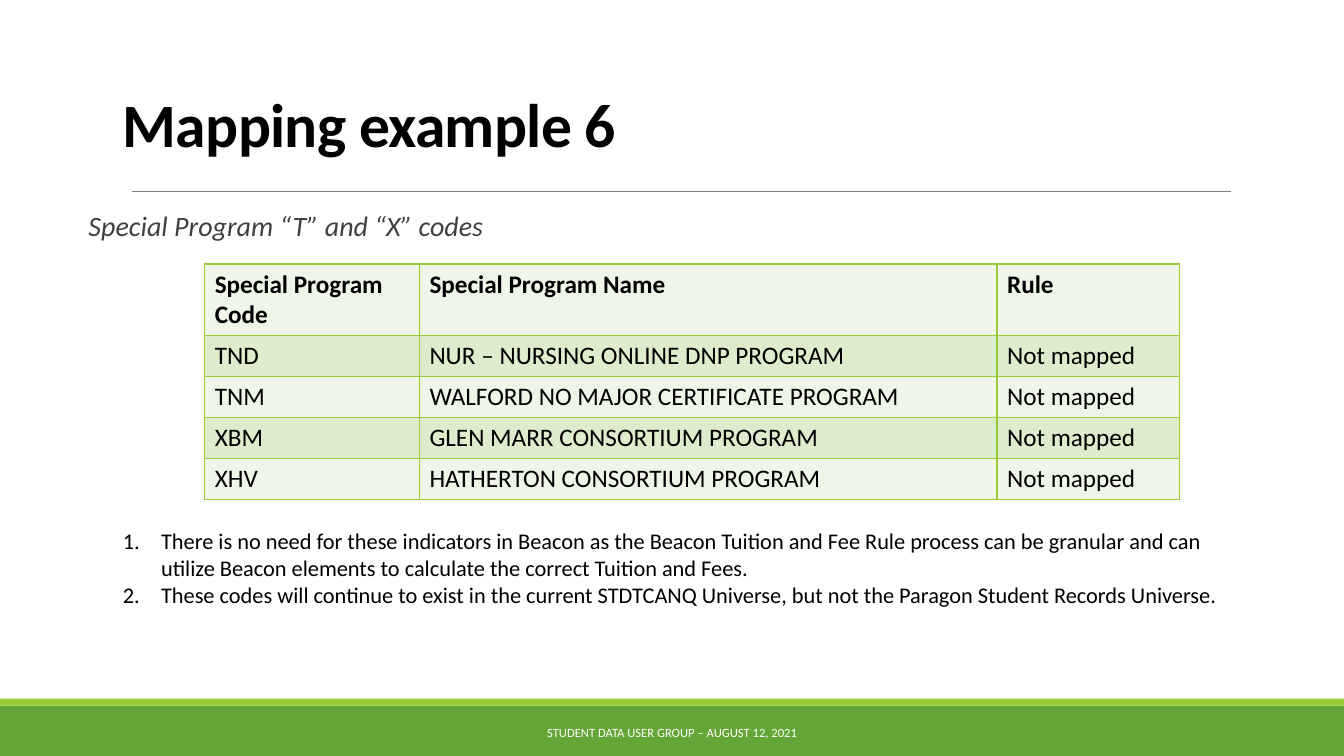
"""Builds the slide "Mapping example 6" with its special program table."""
from lxml.etree import SubElement
from pptx import Presentation
from pptx.dml.color import RGBColor
from pptx.enum.shapes import MSO_CONNECTOR, MSO_SHAPE
from pptx.enum.text import MSO_ANCHOR, PP_ALIGN
from pptx.oxml.ns import qn
from pptx.util import Inches, Pt

TITLE = "Mapping example 6"
SUBTITLE = "Special Program “T” and “X” codes"
FOOTER = "STUDENT DATA USER GROUP – AUGUST 12, 2021"
PROGRAMS = [
    ("Special Program Code", "Special Program Name", "Rule"),
    ("TND", "NUR – NURSING ONLINE DNP PROGRAM", "Not mapped"),
    ("TNM", "WALFORD NO MAJOR CERTIFICATE PROGRAM", "Not mapped"),
    ("XBM", "GLEN MARR CONSORTIUM PROGRAM", "Not mapped"),
    ("XHV", "HATHERTON CONSORTIUM PROGRAM", "Not mapped"),
]
NOTES = [
    "There is no need for these indicators in Beacon as the Beacon Tuition and Fee Rule process "
    "can be granular and can utilize Beacon elements to calculate the correct Tuition and Fees.",
    "These codes will continue to exist in the current STDTCANQ Universe, "
    "but not the Paragon Student Records Universe.",
]
COLORS = {"green": "63A537", "lime": "99CB38", "rule": "808080", "white": "FFFFFF",
          "black": "000000", "gray": "404040", "pale": "EFF6E8", "tint": "DEECCE"}
FONT = "Calibri"

WIDTH, HEIGHT = Inches(13.333), Inches(7.5)
TEXT_LEFT = 8.4
FOOTER_TOP, STRIPE_TOP = 93.33, 92.4
RULE_LEFT, RULE_RIGHT, RULE_TOP = 9.83, 91.58, 25.33
TABLE_LEFT, TABLE_TOP = 15.23, 34.93
PROGRAM_COLUMNS = (15.98, 42.98, 13.58)
HEADER_ROW, BODY_ROW = 9.5, 5.42
NOTE_INDENT = Inches(0.38)


def across(share):
    return round(WIDTH * share / 100)


def down(share):
    return round(HEIGHT * share / 100)


def color(name):
    return RGBColor.from_string(COLORS[name])


def write(frame, lines, size, ink="black", bold=False, italic=False, align=PP_ALIGN.LEFT,
          anchor=MSO_ANCHOR.TOP, spacing=None, tracking=None, numbered=False):
    frame.word_wrap = True
    frame.vertical_anchor = anchor
    for index, line in enumerate(lines):
        paragraph = frame.add_paragraph() if index else frame.paragraphs[0]
        paragraph.alignment = align
        if spacing:
            paragraph.line_spacing = spacing
        run = paragraph.add_run()
        run.text = line
        run.font.name, run.font.size = FONT, Pt(size)
        run.font.bold, run.font.italic = bold, italic
        run.font.color.rgb = color(ink)
        if tracking:
            run.font._element.set("spc", str(tracking))
        if numbered:
            properties = paragraph._p.get_or_add_pPr()
            properties.set("marL", str(NOTE_INDENT))
            properties.set("indent", str(-NOTE_INDENT))
            SubElement(properties, qn("a:buFont"), typeface="+mj-lt")
            SubElement(properties, qn("a:buAutoNum"), type="arabicPeriod")


def add_words(slide, left, top, width, height, lines, **style):
    words = slide.shapes.add_textbox(across(left), down(top), across(width), down(height))
    write(words.text_frame, lines, **style)


def add_band(slide, top, bottom, fill):
    band = slide.shapes.add_shape(MSO_SHAPE.RECTANGLE, 0, down(top), WIDTH, down(bottom - top))
    band.shadow.inherit = False
    band.fill.solid()
    band.fill.fore_color.rgb = color(fill)
    band.line.fill.background()


def add_rule(slide):
    rule = slide.shapes.add_connector(MSO_CONNECTOR.STRAIGHT, across(RULE_LEFT), down(RULE_TOP),
                                      across(RULE_RIGHT), down(RULE_TOP))
    rule.line.color.rgb = color("rule")
    rule.line.width = Pt(0.5)
    SubElement(rule._element.spPr, qn("a:effectLst"))


def add_borders(cell):
    properties = cell._tc.get_or_add_tcPr()
    for side in ("lnL", "lnR", "lnT", "lnB"):
        border = SubElement(properties, qn(f"a:{side}"), w=str(Pt(1)))
        SubElement(SubElement(border, qn("a:solidFill")), qn("a:srgbClr"), val=COLORS["lime"])


def add_programs(slide):
    heights = [HEADER_ROW] + [BODY_ROW] * (len(PROGRAMS) - 1)
    programs = slide.shapes.add_table(
        len(PROGRAMS), len(PROGRAM_COLUMNS), across(TABLE_LEFT), down(TABLE_TOP),
        across(sum(PROGRAM_COLUMNS)), down(sum(heights))).table
    programs.first_row = programs.horz_banding = False
    for column, share in zip(programs.columns, PROGRAM_COLUMNS):
        column.width = across(share)
    for r, (entries, share) in enumerate(zip(PROGRAMS, heights)):
        programs.rows[r].height = down(share)
        for c, entry in enumerate(entries):
            cell = programs.cell(r, c)
            add_borders(cell)
            cell.fill.solid()
            cell.fill.fore_color.rgb = color("tint" if r % 2 else "pale")
            write(cell.text_frame, [entry], size=18, bold=r == 0)


def main():
    deck = Presentation()
    deck.slide_width, deck.slide_height = WIDTH, HEIGHT
    slide = deck.slides.add_slide(deck.slide_layouts[6])
    add_band(slide, FOOTER_TOP, 100, "green")
    add_band(slide, STRIPE_TOP, FOOTER_TOP, "lime")
    add_rule(slide)
    add_words(slide, 30.23, 94.27, 39.53, 5.33, [FOOTER], size=9, ink="white",
              align=PP_ALIGN.CENTER, anchor=MSO_ANCHOR.MIDDLE)
    add_words(slide, TEXT_LEFT, 12.53, 100 - TEXT_LEFT, 9.33, [TITLE], size=44, bold=True,
              anchor=MSO_ANCHOR.BOTTOM, spacing=0.85, tracking=-50)
    add_words(slide, 5.85, 27.47, 84.6, 5.73, [SUBTITLE], size=20, ink="gray", italic=True,
              spacing=0.9)
    add_programs(slide)
    add_words(slide, TEXT_LEFT, 69.07, 84.68, 12.13, NOTES, size=16, numbered=True)
    deck.save("out.pptx")


if __name__ == "__main__":
    main()
